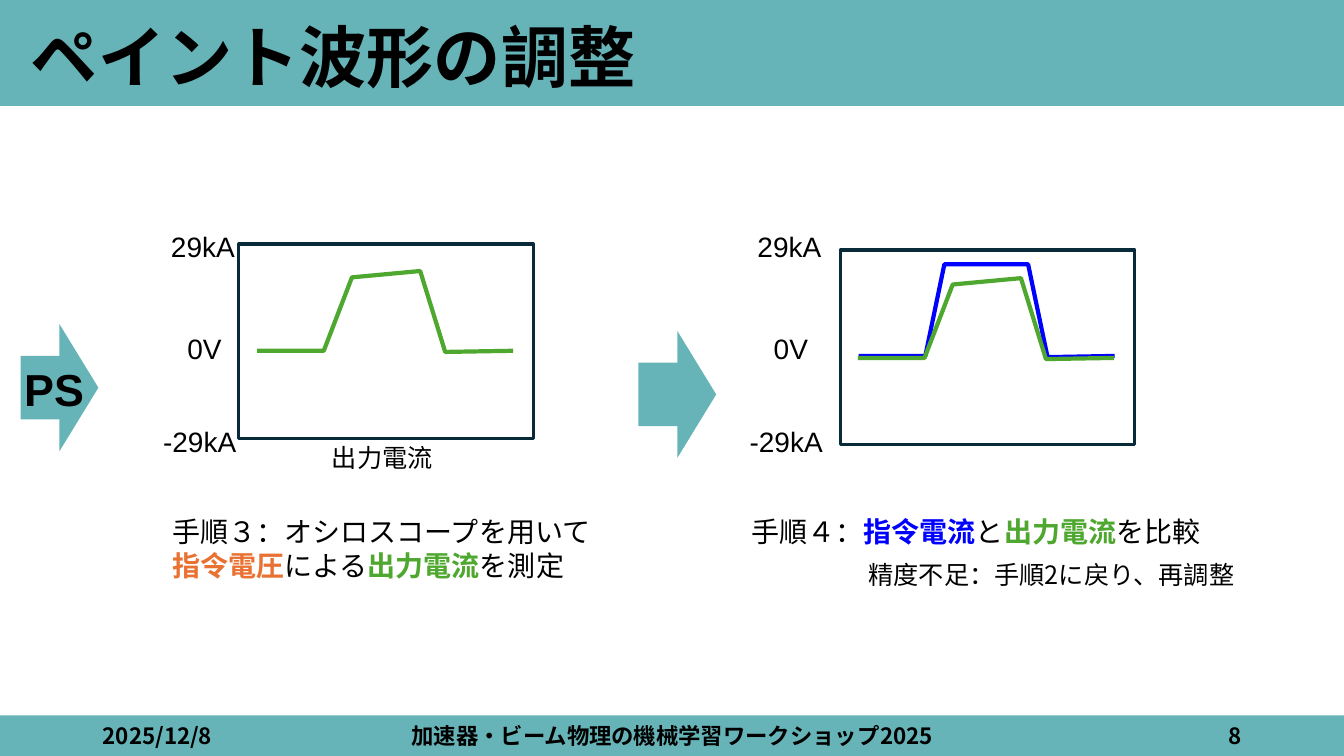
from lxml.etree import SubElement
from pptx import Presentation
from pptx.dml.color import RGBColor
from pptx.enum.shapes import MSO_SHAPE
from pptx.enum.text import MSO_ANCHOR, PP_ALIGN
from pptx.oxml.ns import qn
from pptx.util import Cm, Pt

TEAL = RGBColor(0x66, 0xB4, 0xB8)
NAVY = RGBColor(0x09, 0x2A, 0x39)
BLACK = RGBColor(0, 0, 0)
BLUE = RGBColor(0, 0, 0xFF)
GREEN = RGBColor(0x4E, 0xA7, 0x2E)
ORANGE = RGBColor(0xE9, 0x71, 0x32)
LATIN = "Arial"
JAPANESE = "Noto Sans CJK JP"


def add_text(left, top, width, height, spans, size, font=JAPANESE,
             align=PP_ALIGN.LEFT, anchor=MSO_ANCHOR.TOP, wrap=True):
    box = page.shapes.add_textbox(Cm(left), Cm(top), Cm(width), Cm(height))
    frame = box.text_frame
    frame.word_wrap = wrap
    frame.vertical_anchor = anchor
    para = frame.paragraphs[0]
    para.alignment = align
    for text, color, bold in spans:
        span = para.add_run()
        span.text = text
        span.font.size = Pt(size)
        span.font.bold = bold
        span.font.color.rgb = color
        span.font.name = font
        SubElement(span.font._element, qn("a:ea"), typeface=JAPANESE)
    return para


def add_block(kind, left, top, width, height):
    block = page.shapes.add_shape(kind, Cm(left), Cm(top), Cm(width), Cm(height))
    block.shadow.inherit = False
    block.fill.solid()
    block.fill.fore_color.rgb = TEAL
    block.line.fill.background()
    return block


deck = Presentation()
deck.slide_width = Cm(33.87)
deck.slide_height = Cm(19.05)
page = deck.slides.add_slide(deck.slide_layouts[6])

for top, height in [(18.03, 1.02), (0, 2.67)]:
    add_block(MSO_SHAPE.RECTANGLE, 0, top, 33.87, height)
title = add_text(0.53, 0.38, 32.6, 2.29, [("ペイント波形の調整", BLACK, True)], 48,
                 font=LATIN, anchor=MSO_ANCHOR.MIDDLE)
title.line_spacing = 0.9

for left, top in [(0.52, 8.17), (16.09, 8.34)]:
    add_block(MSO_SHAPE.RIGHT_ARROW, left, top, 1.96, 3.2)
add_text(0.36, 8.99, 2.06, 1.63, [("PS", BLACK, True)], 32, font=LATIN, wrap=False)

for left, top in [(6.02, 6.15), (21.18, 6.3)]:
    panel = add_block(MSO_SHAPE.RECTANGLE, left, top, 7.42, 4.9)
    panel.fill.background()
    panel.line.color.rgb = NAVY
    panel.line.width = Pt(2.25)

for shift in (0, 14.78):
    for label, left, top, width in [("29kA", 4.06, 5.66, 4.5),
                                    ("0V", 4.47, 8.24, 4.06),
                                    ("-29kA", 3.86, 10.58, 3.68)]:
        add_text(left + shift, top, width, 1.11, [(label, BLACK, False)], 20, font=LATIN)

command_wave = [(1.68, 0), (2.16, -2.31), (4.27, -2.31), (4.76, 0.03), (6.45, 0)]
output_wave = [(1.68, 0), (2.39, -1.85), (4.11, -2.01), (4.74, 0.03), (6.45, 0)]
for left, base, wave, color in [(6.48, 8.84, output_wave, GREEN),
                                (21.64, 8.97, command_wave, BLUE),
                                (21.62, 9.02, output_wave, GREEN)]:
    builder = page.shapes.build_freeform(Cm(left), Cm(base))
    builder.add_line_segments([(Cm(left + x), Cm(base + y)) for x, y in wave], close=False)
    curve = builder.convert_to_shape()
    curve.shadow.inherit = False
    curve.fill.background()
    curve.line.color.rgb = color
    curve.line.width = Pt(3)

add_text(5.56, 11.02, 8.15, 1.02, [("出力電流", BLACK, False)], 18,
         font=LATIN, align=PP_ALIGN.CENTER)
add_text(4.09, 12.85, 11.23, 1.96, [
    ("手順３：オシロスコープを用いて", BLACK, False),
    ("指令電圧", ORANGE, True),
    ("による", BLACK, False),
    ("出力電流", GREEN, True),
    ("を測定", BLACK, False),
], 20)
add_text(18.69, 12.83, 13.64, 1.11, [
    ("手順４：", BLACK, False),
    ("指令電流", BLUE, True),
    ("と", BLACK, False),
    ("出力電流", GREEN, True),
    ("を比較", BLACK, False),
], 20)
add_text(21.64, 13.97, 9.86, 1.02, [("精度不足：手順2に戻り、再調整", BLACK, False)], 18)

for text, left, width, align in [
    ("2025/12/8", 2.34, 7.62, PP_ALIGN.LEFT),
    ("加速器・ビーム物理の機械学習ワークショップ2025", 8.81, 16.26, PP_ALIGN.CENTER),
    ("8", 23.93, 7.62, PP_ALIGN.RIGHT),
]:
    add_text(left, 18.03, width, 1.02, [(text, BLACK, True)], 16,
             align=align, anchor=MSO_ANCHOR.MIDDLE)

deck.save("out.pptx")
